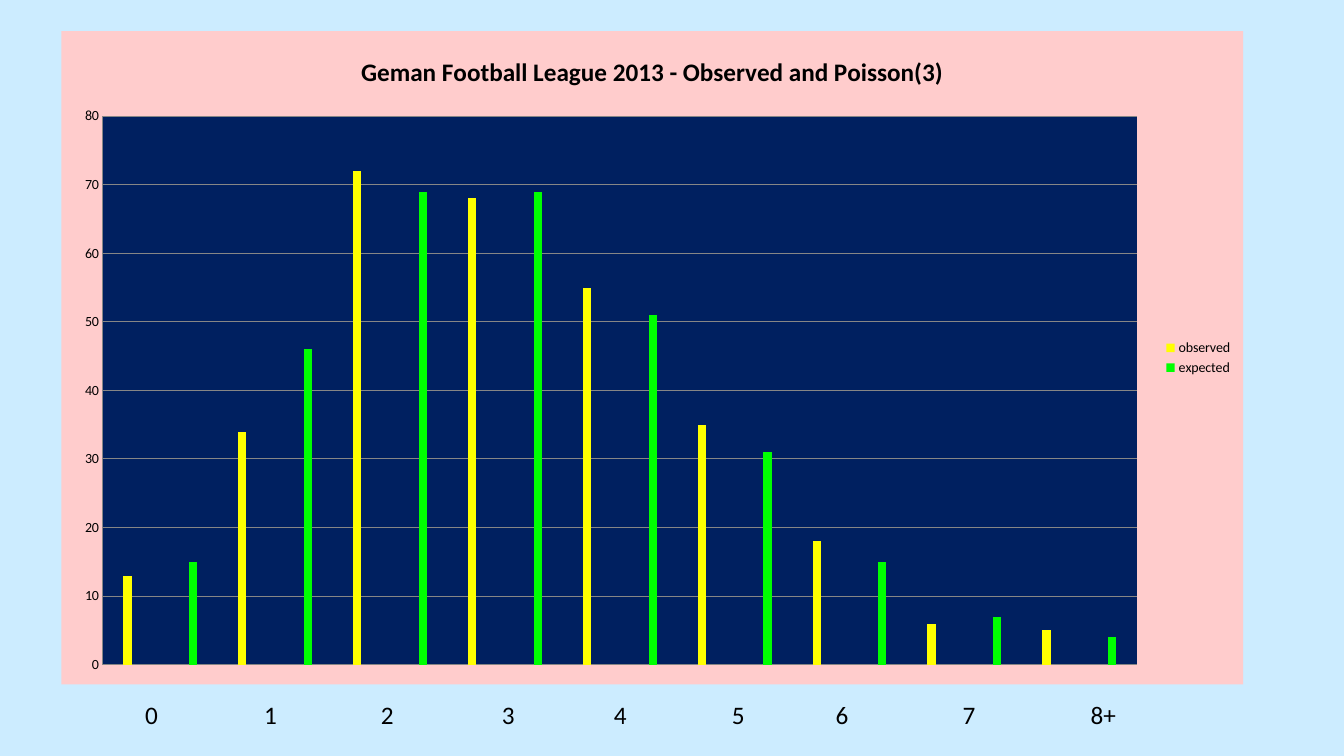
from pptx import Presentation
from pptx.chart.data import CategoryChartData
from pptx.dml.color import RGBColor
from pptx.enum.chart import XL_CHART_TYPE, XL_LEGEND_POSITION, XL_TICK_MARK
from pptx.enum.text import MSO_AUTO_SIZE
from pptx.oxml import parse_xml
from pptx.oxml.ns import nsdecls, qn
from pptx.util import Inches, Pt

FONT = "Calibri"
HEX = {"sky": "CCECFF", "pink": "FFCCCC", "navy": "002060", "grid": "868686",
       "ink": "000000", "observed": "FFFF00", "expected": "00FF00"}
TITLE = "Geman Football League 2013 - Observed and Poisson(3)"
GOALS = {"observed": [13, 34, 72, 68, 55, 35, 18, 6, 5],
         "expected": [15, 46, 69, 69, 51, 31, 15, 7, 4]}
LABELS = [("0", 1.34, 0.3), ("1", 2.52, 0.35), ("2", 3.68, 0.32),
          ("3", 4.88, 0.23), ("4", 5.99, 0.29), ("5", 7.16, 0.35),
          ("6", 8.19, 0.4), ("7", 9.45, 0.42), ("8+", 10.72, 0.54)]
PLOT = {"x": 0.035, "y": 0.13, "w": 0.875, "h": 0.84}


def color(name):
    return RGBColor.from_string(HEX[name])


def style(font, size, bold=False):
    font.name, font.size, font.bold = FONT, Pt(size), bold
    font.color.rgb = color("ink")


def area(name):
    return parse_xml(
        f'<c:spPr {nsdecls("c", "a")}><a:solidFill><a:srgbClr val="{HEX[name]}"/>'
        '</a:solidFill><a:ln><a:noFill/></a:ln></c:spPr>')


def place(plot):
    old = plot.find(qn("c:layout"))
    if old is not None:
        plot.remove(old)
    parts = "".join(f'<c:{key}Mode val="edge"/>' for key in "xy")
    parts += "".join(f'<c:{key} val="{val}"/>' for key, val in PLOT.items())
    plot.insert(0, parse_xml(
        f'<c:layout {nsdecls("c")}><c:manualLayout><c:layoutTarget val="inner"/>'
        f'{parts}</c:manualLayout></c:layout>'))


def add_goals(slide):
    data = CategoryChartData()
    count = len(LABELS)
    data.categories = [str(n + 1) for n in range(2 * count)]
    for shift, (name, goals) in enumerate(GOALS.items()):
        vals = [None] * (2 * count)
        vals[shift::2] = goals
        data.add_series(name, vals)
    chart = slide.shapes.add_chart(
        XL_CHART_TYPE.COLUMN_CLUSTERED, Inches(0.61), Inches(0.31),
        Inches(11.72), Inches(6.48), data).chart
    style(chart.font, 10)

    chart.has_title = True
    run = chart.chart_title.text_frame.paragraphs[0].add_run()
    run.text = TITLE
    style(run.font, 18, True)
    chart.chart_title.include_in_layout = False

    chart.has_legend = True
    chart.legend.position = XL_LEGEND_POSITION.RIGHT
    chart.legend.include_in_layout = False

    chart.category_axis.visible = False
    axis = chart.value_axis
    axis.minimum_scale, axis.maximum_scale, axis.major_unit = 0, 80, 10
    axis.major_tick_mark = axis.minor_tick_mark = XL_TICK_MARK.NONE
    axis.has_major_gridlines = True
    for line in (axis.format.line, axis.major_gridlines.format.line):
        line.color.rgb = color("grid")
        line.width = Pt(0.75)

    bars = chart.plots[0]
    bars.gap_width, bars.overlap, bars.vary_by_categories = 500, 0, False
    for series in bars.series:
        series.format.fill.solid()
        series.format.fill.fore_color.rgb = color(series.name)

    body = chart.element.find(qn("c:chart"))
    plot = body.find(qn("c:plotArea"))
    place(plot)
    plot.append(area("navy"))
    body.addnext(area("pink"))


def add_label(slide, text, left, width):
    box = slide.shapes.add_textbox(
        Inches(left), Inches(6.89), Inches(width), Inches(0.4))
    frame = box.text_frame
    frame.word_wrap = True
    frame.auto_size = MSO_AUTO_SIZE.SHAPE_TO_FIT_TEXT
    run = frame.paragraphs[0].add_run()
    run.text = text
    style(run.font, 18)


def main():
    deck = Presentation()
    deck.slide_width, deck.slide_height = Inches(13.33), Inches(7.5)
    slide = deck.slides.add_slide(deck.slide_layouts[6])
    slide.background.fill.solid()
    slide.background.fill.fore_color.rgb = color("sky")
    add_goals(slide)
    for label in LABELS:
        add_label(slide, *label)
    deck.save("out.pptx")


if __name__ == "__main__":
    main()
